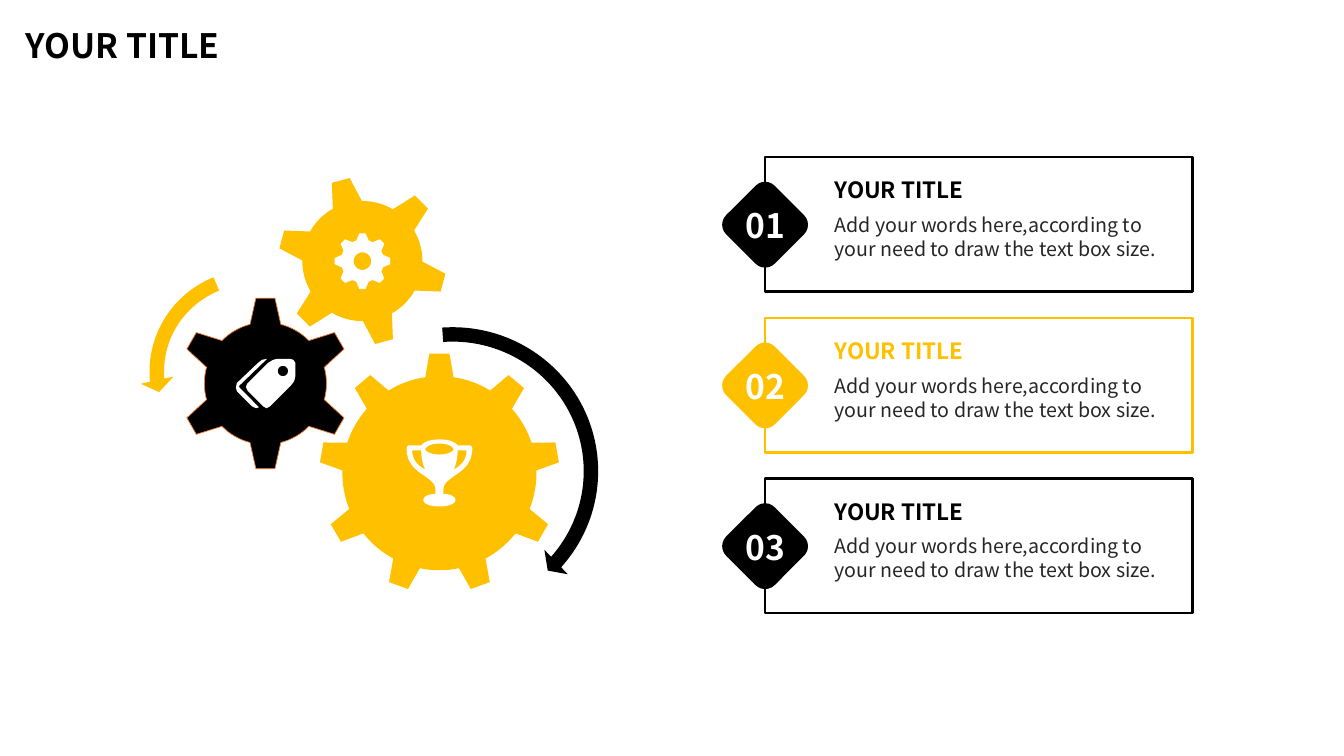
from math import cos, pi, sin

from pptx import Presentation
from pptx.dml.color import RGBColor
from pptx.enum import shapes, text
from pptx.util import Pt

BLACK = RGBColor(0x00, 0x00, 0x00)
WHITE = RGBColor(0xFF, 0xFF, 0xFF)
AMBER = RGBColor(0xFF, 0xC0, 0x00)
ORANGE = RGBColor(0xED, 0x7D, 0x31)
GREY = RGBColor(0x26, 0x26, 0x26)
FONT = "Noto Sans CJK JP"

prs = Presentation()
prs.slide_width, prs.slide_height = Pt(960), Pt(540)
slide = prs.slides.add_slide(prs.slide_layouts[6])


def add_text(parent, box, words, size, color, bold=True, wrap=False, align=text.PP_ALIGN.LEFT):
    tf = parent.add_textbox(*map(Pt, box)).text_frame
    tf.word_wrap = wrap
    tf.auto_size = text.MSO_AUTO_SIZE.SHAPE_TO_FIT_TEXT
    p = tf.paragraphs[0]
    p.text = words
    p.alignment = align
    p.line_spacing = Pt(round(size * 1.22, 1))
    p.font.name, p.font.size, p.font.bold = FONT, Pt(size), bold
    p.font.color.rgb = color


def add_outline(contours, fill, line=None):
    contours = [[(Pt(x), Pt(y)) for x, y in points] for points in contours]
    fb = slide.shapes.build_freeform(*contours[0][0])
    for i, points in enumerate(contours):
        if i:
            fb.move_to(*points[0])
        fb.add_line_segments(points[1:], close=True)
    sp = fb.convert_to_shape()
    sp.shadow.inherit = False
    sp.fill.solid()
    sp.fill.fore_color.rgb = fill
    if line is None:
        sp.line.fill.background()
    else:
        sp.line.color.rgb = line
        sp.line.width = Pt(0.5)


# Heading
add_text(slide.shapes, (11.5, 13.7, 169, 36), "YOUR TITLE", 24, BLACK, wrap=True)

# Rotation arrows
arrows = [
    (shapes.MSO_SHAPE.CIRCULAR_ARROW, (212.4, 226.8, 221.8, 219.6), BLACK,
     (0.047, 2.99, 24.76, 159.507, 0.055)),
    (shapes.MSO_SHAPE.LEFT_CIRCULAR_ARROW, (100.1, 185.8, 161.3, 159.1), AMBER,
     (0.065, 4.3, 104.891, 148.378, 0.075)),
]
for kind, box, color, adjustments in arrows:
    sp = slide.shapes.add_shape(kind, *map(Pt, box))
    for i, value in enumerate(adjustments):
        sp.adjustments[i] = value
    sp.shadow.inherit = False
    sp.fill.solid()
    sp.fill.fore_color.rgb = color
    sp.line.fill.background()

# Gears: centre, teeth, turn in degrees, tip radius and half width,
# rim radius and half width of tooth base, hole radius, colours
gears = [
    (189.6, 273.9, 6, 0, 60.9, 6.8, 43.6, 11, 0, BLACK, ORANGE),
    (258.9, 186.5, 6, -15, 59.6, 6.6, 42.9, 10.7, 0, AMBER, None),
    (258.9, 186.5, 8, 0, 19.8, 2.2, 15.3, 4.5, 6.3, WHITE, None),
    (313.9, 338, 9, 0, 85.4, 7.2, 69.3, 10.1, 0, AMBER, None),
]
for cx, cy, teeth, turn, tip, tip_half, rim, base_half, hole, fill, line in gears:
    outline = []
    for k in range(teeth):
        a = turn * pi / 180 + 2 * pi * k / teeth
        rise = (rim ** 2 - base_half ** 2) ** 0.5
        for across, out in ((-base_half, rise), (-tip_half, tip), (tip_half, tip), (base_half, rise)):
            outline.append((cx + across * cos(a) + out * sin(a), cy + across * sin(a) - out * cos(a)))
        # Rim arc up to the next tooth
        edge = base_half / rim
        gap = 2 * pi / teeth - 2 * edge
        for j in range(1, 8):
            b = a + edge + gap * j / 8
            outline.append((cx + rim * sin(b), cy - rim * cos(b)))
    contours = [outline]
    if hole:
        contours.append([(cx + hole * cos(pi * j / 16), cy + hole * sin(pi * j / 16)) for j in range(32)])
    add_outline(contours, fill, line)

# Tag icon
front_tag = [(207.4, 256.3), (198, 256.3), (195.1, 257), (191.5, 259.2), (176.4, 274.3), (175.7, 276.5),
             (177.1, 279.4), (187.9, 290.2), (190.4, 291.6), (193, 290.2), (208.1, 275), (210.2, 272.2),
             (211, 268.6), (211, 259.2), (209.5, 257)]
tag_hole = [(202.1 + 3.7 * cos(pi * j / 12), 265 + 3.7 * sin(pi * j / 12)) for j in range(24)]
back_tag = [(171.4, 277.2), (185, 290.9), (182.9, 291.6), (180, 290.2), (169.2, 279.4), (168.5, 276.8),
            (169.2, 273.6), (184.3, 259.2), (187.2, 257), (190.8, 256.3), (170.6, 275.8)]
add_outline([front_tag, tag_hole, back_tag], WHITE)

# Trophy icon: right-hand outlines from its top centre; three points make a curve
cup = [[(0, 0)], [(7.9, 0), (11.5, 2.2), (13, 4.3)], [(21.6, 4.3)],
       [(22.3, 4.3), (23.5, 5), (23.5, 6.5)], [(23.5, 17.3), (16.5, 22.3), (10.8, 25.9)],
       [(5.8, 29.5), (2.9, 31.7), (2.9, 35.3)], [(2.9, 38.9)],
       [(7.9, 38.9), (11.5, 41), (11.5, 43.2)], [(11.5, 46), (6.5, 47.9), (0, 47.9)]]
mouth = [[(0, 2.9)], [(7.2, 2.9), (10.1, 5.8), (10.1, 7.2)], [(10.1, 7.9), (7.2, 10.8), (0, 10.8)]]
handle = [[(10.1, 21.6)], [(11.5, 18.7), (13, 14.4), (13, 7.9)], [(19.4, 7.9)],
          [(19.4, 15.1), (15.1, 18.7), (10.1, 21.6)]]
halves = []
for segments in (cup, mouth, handle):
    points = []
    for segment in segments:
        if len(segment) == 1:
            points += segment
            continue
        curve = [points[-1]] + segment
        for j in range(1, 9):
            t = j / 8
            weights = ((1 - t) ** 3, 3 * t * (1 - t) ** 2, 3 * t * t * (1 - t), t ** 3)
            points.append(tuple(sum(w * c[axis] for w, c in zip(weights, curve)) for axis in (0, 1)))
    halves.append(points)
right = [[(313.9 + x, 313.9 + y) for x, y in points] for points in halves]
left = [[(313.9 - x, 313.9 + y) for x, y in points] for points in halves]
add_outline([right[0] + left[0][::-1], right[1] + left[1][::-1], right[2], left[2]], WHITE)

# Numbered cards
for i, color in enumerate((BLACK, AMBER, BLACK)):
    top = 112.3 + 114.8 * i
    card = slide.shapes.add_group_shape().shapes
    frame = card.add_shape(shapes.MSO_SHAPE.RECTANGLE, Pt(546.5), Pt(top), Pt(305.3), Pt(96))
    frame.shadow.inherit = False
    frame.fill.background()
    frame.line.color.rgb = color
    frame.line.width = Pt(1.75)
    badge = card.add_shape(shapes.MSO_SHAPE.ROUNDED_RECTANGLE, Pt(522), Pt(top + 23.7), Pt(49), Pt(49))
    badge.adjustments[0] = 0.197
    badge.rotation = 45
    badge.shadow.inherit = False
    badge.fill.solid()
    badge.fill.fore_color.rgb = color
    badge.line.fill.background()
    add_text(card, (525.3, top + 30.1, 42.5, 36.4), f"0{i + 1}", 24, WHITE, align=text.PP_ALIGN.CENTER)
    add_text(card, (589, top + 10, 108.7, 26.6), "YOUR TITLE", 16, color)
    add_text(card, (589, top + 36, 262.8, 41), "Add your words here,according to your need to draw the text box size.",
             14, GREY, bold=False, wrap=True)

prs.save("out.pptx")
